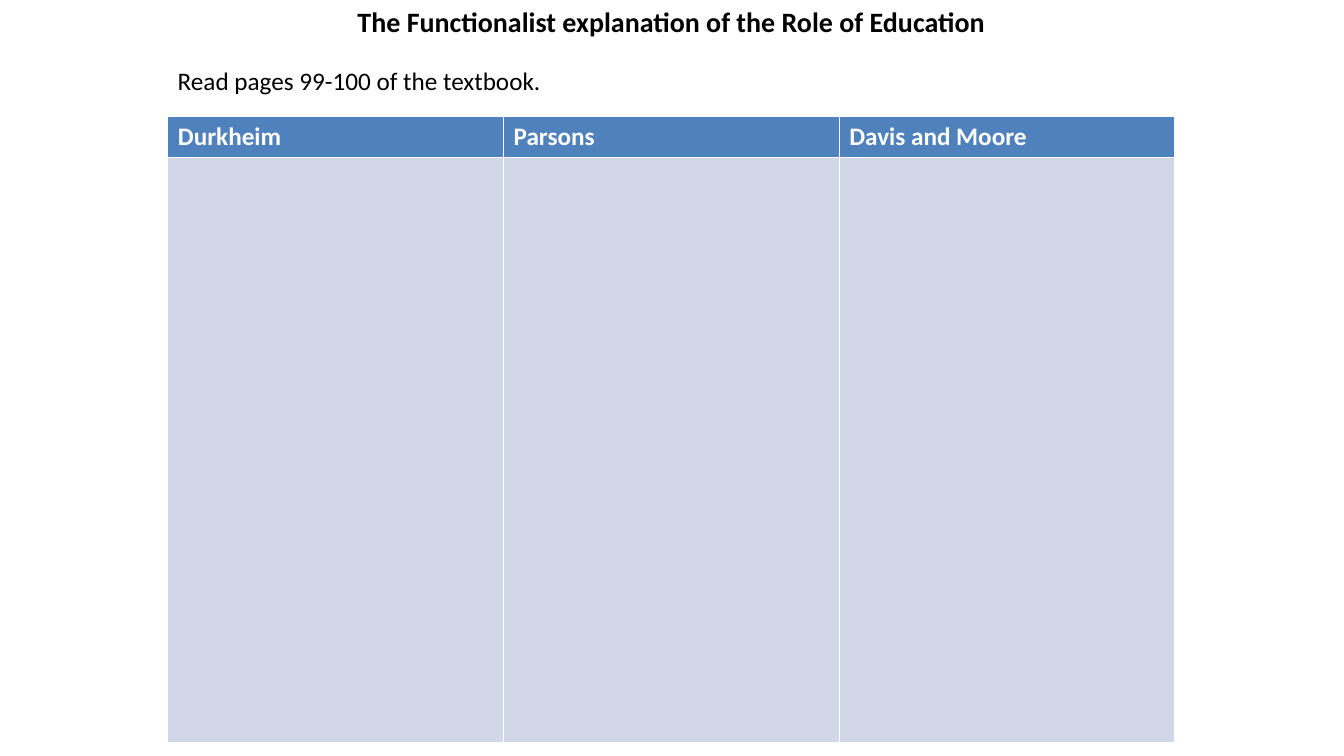
"""Build a slide with a blank note table on functionalist views of education."""
from pptx import Presentation
from pptx.dml.color import RGBColor as RGB
from pptx.enum.text import PP_ALIGN as Align
from pptx.util import Cm, Pt

BLACK = RGB(0x00, 0x00, 0x00)
WHITE = RGB(0xFF, 0xFF, 0xFF)
BLUE = RGB(0x4F, 0x81, 0xBD)
PALE = RGB(0xD0, 0xD8, 0xE8)

LEFT = Cm(4.23)
WIDTH = Cm(25.38)
HEAD = Cm(1.03)
BODY = Cm(14.74)


def add_run(para, text, size, color, bold=False):
    run = para.add_run()
    run.text = text
    run.font.name = "Calibri"
    run.font.size = Pt(size)
    run.font.bold = bold
    run.font.color.rgb = color


deck = Presentation()
deck.slide_width = Cm(33.87)
deck.slide_height = Cm(19.05)
slide = deck.slides.add_slide(deck.slide_layouts[6])

texts = [
    ("The Functionalist explanation of the Role of Education",
     0, WIDTH, 1.11, 20, True, Align.CENTER),
    ("Read pages 99-100 of the textbook.",
     1.52, Cm(23.2), 1.8, 18, False, Align.LEFT),
]
for text, top, width, height, size, bold, align in texts:
    box = slide.shapes.add_textbox(LEFT, Cm(top), width, Cm(height))
    frame = box.text_frame
    frame.word_wrap = True
    para = frame.paragraphs[0]
    para.alignment = align
    add_run(para, text, size, BLACK, bold)

names = ["Durkheim", "Parsons", "Davis and Moore"]
table = slide.shapes.add_table(
    2, len(names), LEFT, Cm(2.93), WIDTH, HEAD + BODY).table
table.rows[0].height = HEAD
table.rows[1].height = BODY
for col, name in enumerate(names):
    for row, color in enumerate([BLUE, PALE]):
        fill = table.cell(row, col).fill
        fill.solid()
        fill.fore_color.rgb = color
    para = table.cell(0, col).text_frame.paragraphs[0]
    add_run(para, name, 18, WHITE, True)

deck.save("out.pptx")
